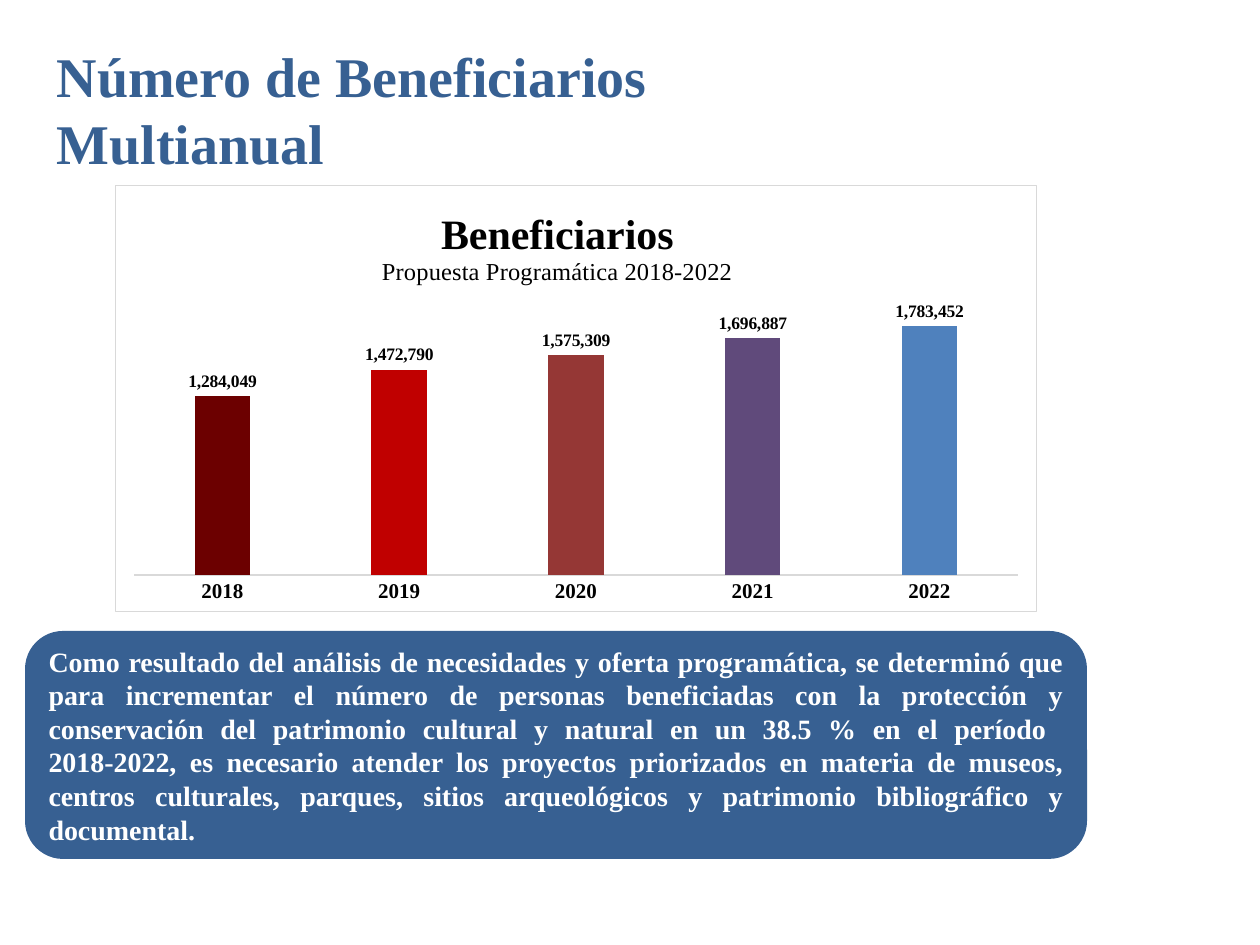
"""Build the slide on yearly beneficiaries: title, column chart and summary box."""
from dataclasses import dataclass
from typing import Any

from lxml.etree import fromstring
from pptx import Presentation
from pptx.chart.data import CategoryChartData as Data
from pptx.dml.color import RGBColor as Rgb
from pptx.enum.chart import XL_CHART_TYPE as Kind, XL_LABEL_POSITION as Spot
from pptx.enum.chart import XL_TICK_MARK as Tick
from pptx.enum.shapes import MSO_SHAPE as Form
from pptx.enum.text import MSO_ANCHOR as Anchor, MSO_AUTO_SIZE as Fit, PP_ALIGN as Align
from pptx.util import Emu, Pt

PX = 914400 / 126
FACE = "Times New Roman"
HUES = {"navy": "376092", "white": "FFFFFF", "black": "000000", "rule": "D9D9D9"}
NS = ('xmlns:c="http://schemas.openxmlformats.org/drawingml/2006/chart" '
      'xmlns:a="http://schemas.openxmlformats.org/drawingml/2006/main"')
NOTE = (
    "Como resultado del análisis de necesidades y oferta programática, se determinó que "
    "para incrementar el número de personas beneficiadas con la protección y conservación "
    "del patrimonio cultural y natural en un 38.5 % en el período ",
    "2018-2022, es necesario atender los proyectos priorizados en materia de museos, "
    "centros culturales, parques, sitios arqueológicos y patrimonio bibliográfico y "
    "documental.",
)


@dataclass
class Box:
    left: int
    top: int
    width: int
    height: int

    def emu(self) -> list[Emu]:
        return [Emu(round(n * PX)) for n in (self.left, self.top, self.width, self.height)]


@dataclass
class Bar:
    year: str
    count: int
    hue: str


BARS = [
    Bar("2018", 1284049, "6C0000"),
    Bar("2019", 1472790, "C00000"),
    Bar("2020", 1575309, "953735"),
    Bar("2021", 1696887, "604A7B"),
    Bar("2022", 1783452, "4F81BD"),
]


def apply(item: Any, **vals: Any) -> None:
    for key, val in vals.items():
        setattr(item, key, val)


def style(font: Any, size: int, hue: str, bold: bool = True) -> None:
    apply(font, name=FACE, size=Pt(size), bold=bold)
    font.color.rgb = Rgb.from_string(HUES[hue])


def rule(line: Any) -> None:
    line.color.rgb = Rgb.from_string(HUES["rule"])
    line.width = Pt(0.75)


def layout(**vals: float) -> Any:
    modes = "".join(f'<c:{key}Mode val="edge"/>' for key in ("x", "y"))
    sizes = "".join(f'<c:{key} val="{val}"/>' for key, val in vals.items())
    inner = '<c:layoutTarget val="inner"/>' if "w" in vals else ""
    return fromstring(f"<c:layout {NS}><c:manualLayout>{inner}{modes}{sizes}"
                      "</c:manualLayout></c:layout>")


def place(node: Any, spot: Any, prior: Any = None) -> None:
    for old in node.findall(spot.tag):
        node.remove(old)
    if prior is None:
        node.insert(0, spot)
    else:
        prior.addnext(spot)


def head(slide: Any, box: Box, text: str) -> None:
    shape = slide.shapes.title
    apply(shape, **dict(zip(("left", "top", "width", "height"), box.emu())))
    frame = shape.text_frame
    frame.text = text
    apply(frame, word_wrap=True, auto_size=Fit.NONE, vertical_anchor=Anchor.MIDDLE)
    para = frame.paragraphs[0]
    para.alignment = Align.LEFT
    style(para.runs[0].font, 32, "navy")


def panel(slide: Any, box: Box, parts: tuple[str, ...]) -> None:
    shape = slide.shapes.add_shape(Form.ROUNDED_RECTANGLE, *box.emu())
    shape.shadow.inherit = False
    shape.fill.solid()
    shape.fill.fore_color.rgb = Rgb.from_string(HUES["navy"])
    shape.line.fill.background()
    frame = shape.text_frame
    apply(frame, word_wrap=True, vertical_anchor=Anchor.MIDDLE)
    para = frame.paragraphs[0]
    para.alignment = Align.JUSTIFY
    for num, part in enumerate(parts):
        if num:
            para.add_line_break()
        run = para.add_run()
        run.text = part
        style(run.font, 16, "white")


def caption(chart: Any) -> None:
    frame = chart.chart_title.text_frame
    lines = [("Beneficiarios", 24, True), ("Propuesta Programática 2018-2022", 14, False)]
    for num, (text, size, bold) in enumerate(lines):
        para = frame.add_paragraph() if num else frame.paragraphs[0]
        run = para.add_run()
        run.text = text
        style(run.font, size, "black", bold)
    node = chart.chart_title._element
    place(node, layout(x=0.285, y=0.045), node[0])
    chart.chart_title.include_in_layout = False


def graph(slide: Any, box: Box, bars: list[Bar]) -> None:
    data = Data(number_format="#,##0")
    data.categories = [bar.year for bar in bars]
    data.add_series("Beneficiarios", [bar.count for bar in bars])
    chart = slide.shapes.add_chart(Kind.COLUMN_CLUSTERED, *box.emu(), data).chart
    chart.has_legend = False
    style(chart.font, 10, "black", False)
    caption(chart)

    years = chart.category_axis
    apply(years, major_tick_mark=Tick.NONE, minor_tick_mark=Tick.NONE,
          has_major_gridlines=False)
    style(years.tick_labels.font, 12, "black")
    rule(years.format.line)
    apply(chart.value_axis, visible=False, has_major_gridlines=False,
          minimum_scale=0, maximum_scale=2000000)

    plot = chart.plots[0]
    apply(plot, gap_width=219, vary_by_categories=False)
    row = plot.series[0]
    for num, bar in enumerate(bars):
        fill = row.points[num].format.fill
        fill.solid()
        fill.fore_color.rgb = Rgb.from_string(bar.hue)
    tags = row.data_labels
    apply(tags, show_value=True, position=Spot.OUTSIDE_END,
          number_format="#,##0", number_format_is_linked=False)
    style(tags.font, 10, "black")

    root = chart._chartSpace.chart
    place(root.plotArea, layout(x=0.02, y=0.26, w=0.96, h=0.655))
    root.addnext(fromstring(
        f'<c:spPr {NS}><a:noFill/><a:ln w="{Pt(0.75)}"><a:solidFill>'
        f'<a:srgbClr val="{HUES["rule"]}"/></a:solidFill></a:ln></c:spPr>'))


def main() -> None:
    deck = Presentation()
    apply(deck, slide_width=Emu(round(1260 * PX)), slide_height=Emu(round(945 * PX)))
    slide = deck.slides.add_slide(deck.slide_layouts[5])
    head(slide, Box(44, 26, 656, 166), "Número de Beneficiarios Multianual")
    panel(slide, Box(25, 631, 1062, 228), NOTE)
    graph(slide, Box(115, 185, 922, 427), BARS)
    deck.save("out.pptx")


if __name__ == "__main__":
    main()
